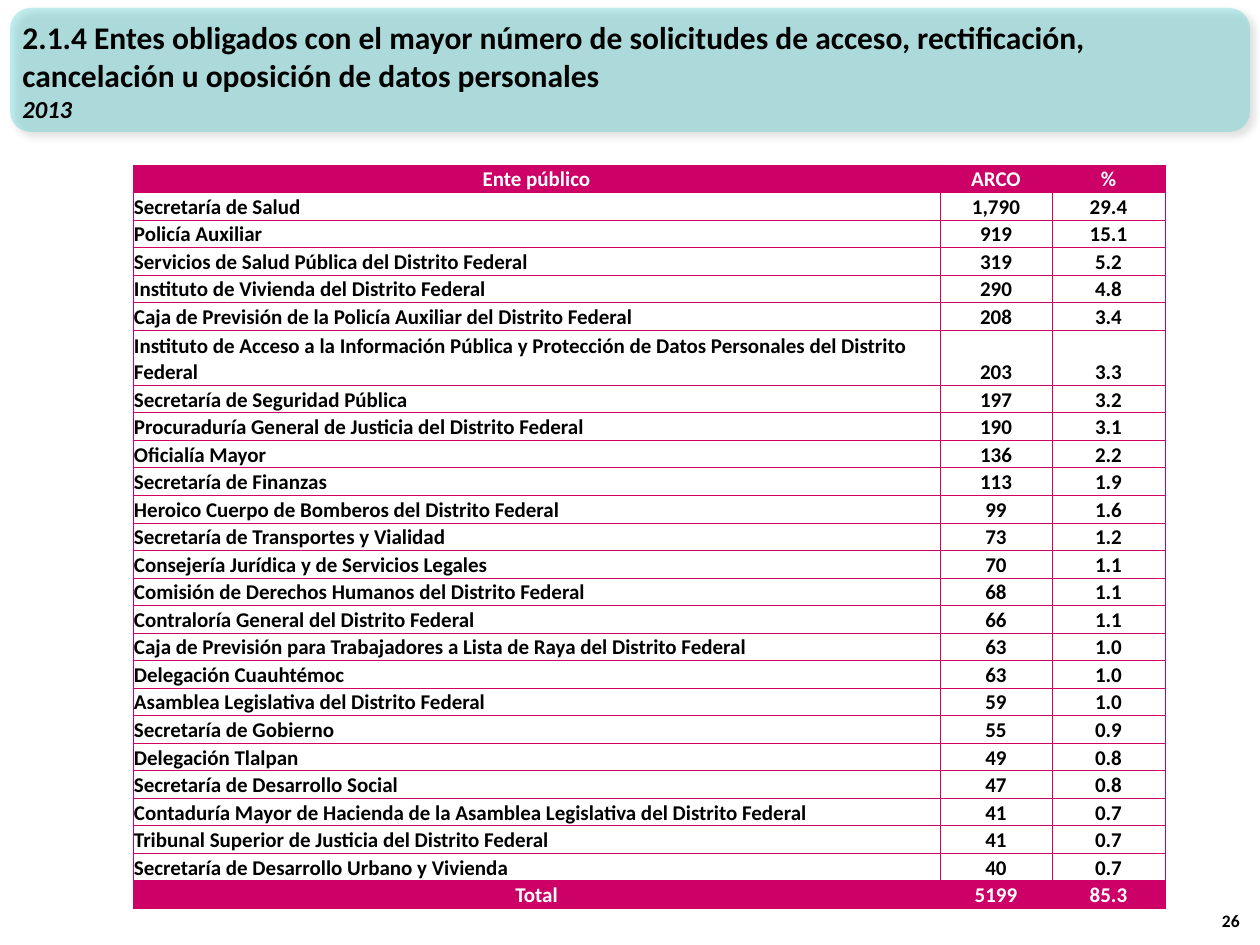
from pptx import Presentation
from pptx.dml.color import RGBColor
from pptx.enum.shapes import MSO_SHAPE as Shape
from pptx.enum.text import MSO_ANCHOR as Anchor, PP_ALIGN as Align
from pptx.oxml import parse_xml
from pptx.oxml.ns import nsdecls
from pptx.util import Pt

SCALE = 914400 / 126  # EMU in one px
TEAL = RGBColor(0x33, 0xCC, 0xCC)
PINK = RGBColor(0xCC, 0x00, 0x66)
BLACK = RGBColor(0x00, 0x00, 0x00)
WHITE = RGBColor(0xFF, 0xFF, 0xFF)

TITLE = ("2.1.4 Entes obligados con el mayor número de solicitudes de acceso, "
         "rectificación, cancelación u oposición de datos personales")
ROWS = [
    ("Ente público", "ARCO", "%"),
    ("Secretaría de Salud", "1,790", "29.4"),
    ("Policía Auxiliar", "919", "15.1"),
    ("Servicios de Salud Pública del Distrito Federal", "319", "5.2"),
    ("Instituto de Vivienda del Distrito Federal", "290", "4.8"),
    ("Caja de Previsión de la Policía Auxiliar del Distrito Federal", "208", "3.4"),
    ("Instituto de Acceso a la Información Pública y Protección de Datos "
     "Personales del Distrito Federal", "203", "3.3"),
    ("Secretaría de Seguridad Pública", "197", "3.2"),
    ("Procuraduría General de Justicia del Distrito Federal", "190", "3.1"),
    ("Oficialía Mayor", "136", "2.2"),
    ("Secretaría de Finanzas", "113", "1.9"),
    ("Heroico Cuerpo de Bomberos del Distrito Federal", "99", "1.6"),
    ("Secretaría de Transportes y Vialidad", "73", "1.2"),
    ("Consejería Jurídica y de Servicios Legales", "70", "1.1"),
    ("Comisión de Derechos Humanos del Distrito Federal", "68", "1.1"),
    ("Contraloría General del Distrito Federal", "66", "1.1"),
    ("Caja de Previsión para Trabajadores a Lista de Raya del Distrito Federal",
     "63", "1.0"),
    ("Delegación Cuauhtémoc", "63", "1.0"),
    ("Asamblea Legislativa del Distrito Federal", "59", "1.0"),
    ("Secretaría de Gobierno", "55", "0.9"),
    ("Delegación Tlalpan", "49", "0.8"),
    ("Secretaría de Desarrollo Social", "47", "0.8"),
    ("Contaduría Mayor de Hacienda de la Asamblea Legislativa del Distrito Federal",
     "41", "0.7"),
    ("Tribunal Superior de Justicia del Distrito Federal", "41", "0.7"),
    ("Secretaría de Desarrollo Urbano y Vivienda", "40", "0.7"),
    ("Total", "5199", "85.3"),
]
COLS = (807, 112, 113)
TALL = 6  # the row whose name takes two lines


def px(num):
    return round(num * SCALE)


def style(para, size, color=BLACK, align=Align.LEFT, italic=False):
    para.alignment = align
    font = para.font
    font.name, font.size, font.bold = "Calibri", Pt(size), True
    font.italic = italic
    font.color.rgb = color


def add_banner(slide, *box):
    shape = slide.shapes.add_shape(Shape.ROUNDED_RECTANGLE, *map(px, box))
    shape.fill.solid()
    shape.fill.fore_color.rgb = TEAL
    shape.line.fill.background()
    # Transparent fill and soft shadow
    props = shape.element.spPr
    color = props.find(".//{*}solidFill/{*}srgbClr")
    color.append(parse_xml(f'<a:alpha {nsdecls("a")} val="30000"/>'))
    props.append(parse_xml(
        f'<a:effectLst {nsdecls("a")}><a:outerShdw blurRad="{Pt(4)}" '
        f'dist="{Pt(3)}" dir="2700000" algn="tl" rotWithShape="0">'
        f'<a:srgbClr val="{BLACK}"><a:alpha val="40000"/></a:srgbClr>'
        '</a:outerShdw></a:effectLst>'))


def add_text(slide, box, anchor, lines):
    frame = slide.shapes.add_textbox(*map(px, box)).text_frame
    frame.word_wrap = True
    frame.vertical_anchor = anchor
    for i, (text, look) in enumerate(lines):
        para = frame.add_paragraph() if i else frame.paragraphs[0]
        para.text = text
        style(para, **look)


def set_edges(cell):
    props = cell._tc.get_or_add_tcPr()
    for i, side in enumerate(("lnL", "lnR", "lnT", "lnB")):
        props.insert(i, parse_xml(
            f'<a:{side} {nsdecls("a")} w="{Pt(0.5)}"><a:solidFill>'
            f'<a:srgbClr val="{PINK}"/></a:solidFill></a:{side}>'))


def fill_cell(cell, text, strong, align):
    cell.text = text
    cell.vertical_anchor = Anchor.BOTTOM
    cell.margin_left = cell.margin_right = cell.margin_top = px(1)
    cell.margin_bottom = 0
    if strong:
        cell.fill.solid()
        cell.fill.fore_color.rgb = PINK
    else:
        cell.fill.background()
    style(cell.text_frame.paragraphs[0], 12, WHITE if strong else BLACK, align)
    set_edges(cell)


def add_grid(slide, left, top, high):
    box = map(px, (left, top, sum(COLS), high))
    grid = slide.shapes.add_table(len(ROWS), len(COLS), *box).table
    grid.first_row = grid.horz_banding = False
    for col, wide in zip(grid.columns, COLS):
        col.width = px(wide)
    unit = high / (len(ROWS) + 1)
    for r, row in enumerate(ROWS):
        grid.rows[r].height = px(unit * (2 if r == TALL else 1))
        strong = r in (0, len(ROWS) - 1)
        for c, text in enumerate(row):
            align = Align.CENTER if strong or c else Align.LEFT
            fill_cell(grid.cell(r, c), text, strong, align)


def main():
    deck = Presentation()
    deck.slide_width, deck.slide_height = px(1260), px(945)
    slide = deck.slides.add_slide(deck.slide_layouts[6])
    # Heading
    add_banner(slide, 10, 8, 1240, 124)
    add_text(slide, (10, 11, 1156, 119), Anchor.MIDDLE,
             [(TITLE, {"size": 18}), ("2013", {"size": 14, "italic": True})])
    # Page number
    add_text(slide, (1202, 887, 50, 50), Anchor.BOTTOM,
             [("26", {"size": 10, "align": Align.RIGHT})])
    # Requests by public body
    add_grid(slide, 133, 165, 744)
    deck.save("out.pptx")


if __name__ == "__main__":
    main()
